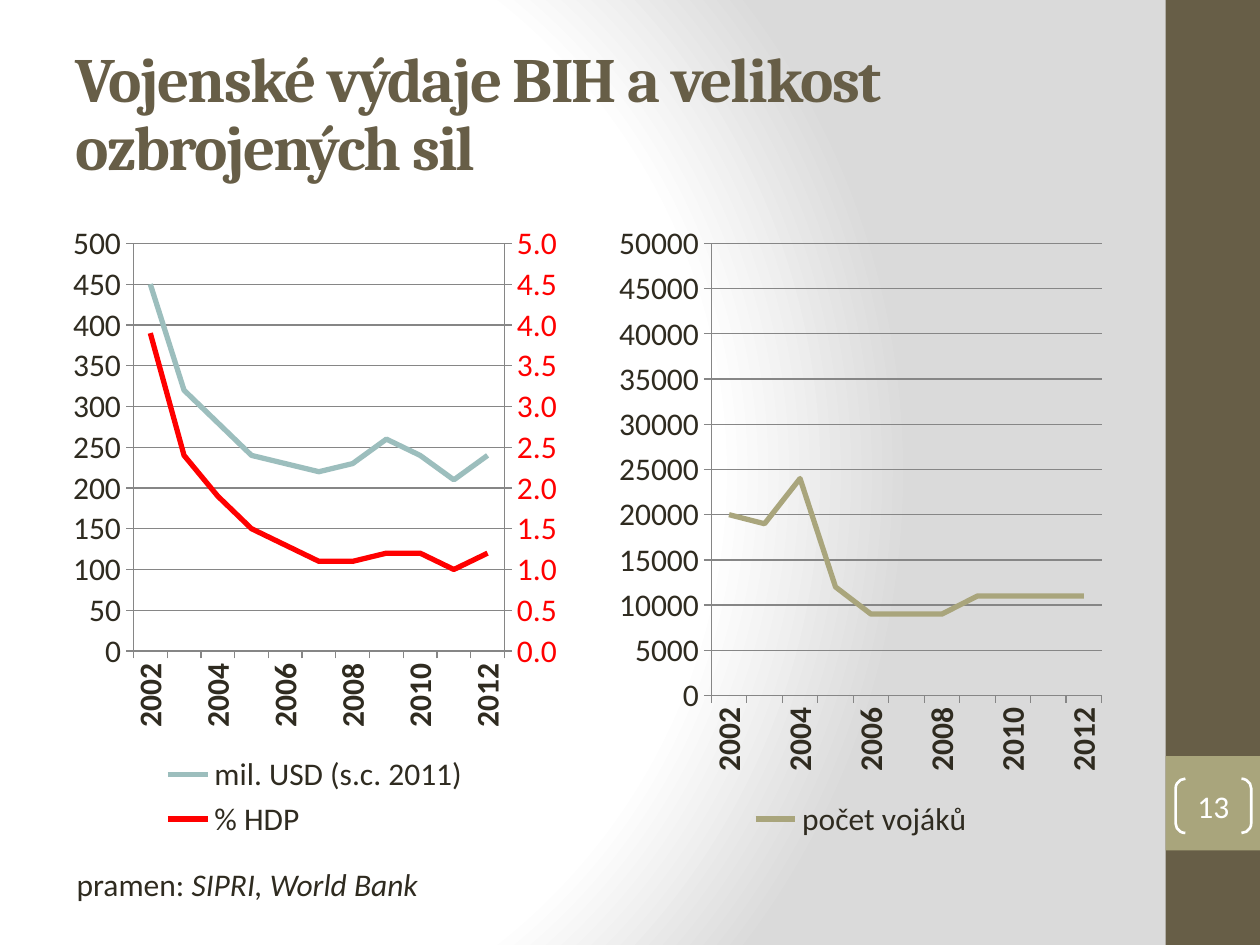
from copy import deepcopy
from dataclasses import dataclass

from pptx import Presentation
from pptx import util as u
from pptx.chart.data import CategoryChartData
from pptx.dml.color import RGBColor
from pptx.enum import chart as charts, shapes, text
from pptx.oxml import parse_xml
from pptx.oxml.ns import nsdecls, qn

COLOURS = {
    "brown": "675E47",
    "olive": "A9A57C",
    "teal": "9CBEBD",
    "red": "FF0000",
    "ink": "2F2B20",
    "white": "FFFFFF",
    "grey": "DADADA",
    "axis": "868686",
}
YEARS = [str(year) for year in range(2002, 2013)]


@dataclass(frozen=True)
class Band:
    top: float
    height: float
    colour: str


@dataclass(frozen=True)
class Line:
    name: str
    values: tuple
    colour: str


@dataclass(frozen=True)
class Plot:
    left: float
    maximum: float
    step: float
    lines: tuple


BANDS = (Band(0, 540, "brown"), Band(432, 54, "olive"))
PLOTS = (
    Plot(36, 500, 50, (
        Line("mil. USD (s.c. 2011)",
             (450, 320, 280, 240, 230, 220, 230, 260, 240, 210, 240), "teal"),
        Line("% HDP",
             (3.9, 2.4, 1.9, 1.5, 1.3, 1.1, 1.1, 1.2, 1.2, 1, 1.2), "red"),
    )),
    Plot(348, 50000, 5000, (
        Line("počet vojáků",
             (20000, 19000, 24000, 12000, 9000, 9000, 9000,
              11000, 11000, 11000, 11000), "olive"),
    )),
)


def rgb(name: str) -> RGBColor:
    return RGBColor.from_string(COLOURS[name])


def add_span(para, content: str, *, size=18, font="Calibri", colour="ink",
             bold=False, italic=False, spacing=0) -> None:
    span = para.add_run()
    span.text = content
    span.font.size = u.Pt(size)
    span.font.name = font
    span.font.bold = bold
    span.font.italic = italic
    span.font.color.rgb = rgb(colour)
    if spacing:
        span.font._element.set("spc", str(spacing * 100))


def add_box(page, left: float, top: float, width: float, height: float):
    return page.shapes.add_textbox(u.Pt(left), u.Pt(top), u.Pt(width), u.Pt(height))


def set_background(page) -> None:
    stops = "".join(
        f'<a:gs pos="{position}000"><a:srgbClr val="{COLOURS[name]}"/></a:gs>'
        for position, name in ((0, "white"), (75, "white"), (100, "grey")))
    page._element.cSld.insert(0, parse_xml(
        f'<p:bg {nsdecls("p", "a")}><p:bgPr><a:gradFill rotWithShape="1">'
        f'<a:gsLst>{stops}</a:gsLst><a:path path="circle">'
        '<a:fillToRect l="20000" t="50000" r="100000" b="50000"/></a:path>'
        '</a:gradFill><a:effectLst/></p:bgPr></p:bg>'))


def add_band(page, band: Band) -> None:
    shape = page.shapes.add_shape(
        shapes.MSO_SHAPE.RECTANGLE, u.Pt(666), u.Pt(band.top), u.Pt(54), u.Pt(band.height))
    shape.shadow.inherit = False
    shape.fill.solid()
    shape.fill.fore_color.rgb = rgb(band.colour)
    shape.line.fill.background()


def add_page_number(page, number: str) -> None:
    bracket = page.shapes.add_shape(
        shapes.MSO_SHAPE.DOUBLE_BRACKET, u.Pt(671.8), u.Pt(445), u.Pt(43.2), u.Pt(31))
    bracket.shadow.inherit = False
    bracket.adjustments[0] = 0.18
    bracket.fill.background()
    bracket.line.color.rgb = rgb("white")
    bracket.line.width = u.Pt(1.5)
    frame = bracket.text_frame
    frame.margin_left = frame.margin_right = frame.margin_top = frame.margin_bottom = 0
    frame.vertical_anchor = text.MSO_ANCHOR.MIDDLE
    para = frame.paragraphs[0]
    para.alignment = text.PP_ALIGN.CENTER
    add_span(para, number, colour="white")


def style_axis(axis) -> None:
    axis.major_tick_mark = charts.XL_TICK_MARK.OUTSIDE
    axis.minor_tick_mark = charts.XL_TICK_MARK.NONE
    axis.format.line.color.rgb = rgb("axis")
    axis.format.line.width = u.Pt(0.75)


def set_value_scale(axis, maximum: float, step: float, number_format: str) -> None:
    axis.minimum_scale = 0
    axis.maximum_scale = maximum
    axis.major_unit = step
    axis.tick_labels.number_format = number_format
    axis.tick_labels.number_format_is_linked = False


def move_last_line_to_right_axis(chart, maximum: float, step: float) -> None:
    area = chart._chartSpace.chart.plotArea
    left_plot = area.find(qn("c:lineChart"))
    category, value = area.find(qn("c:catAx")), area.find(qn("c:valAx"))
    right_plot = deepcopy(left_plot)
    left_plot.remove(left_plot.findall(qn("c:ser"))[-1])
    right_plot.remove(right_plot.find(qn("c:ser")))
    left_plot.addnext(right_plot)
    right_category, right_value = deepcopy(category), deepcopy(value)
    value.addnext(right_value)
    right_value.addnext(right_category)

    category_id, value_id = "50010", "50020"
    for reference, key in zip(right_plot.findall(qn("c:axId")), (category_id, value_id)):
        reference.set("val", key)
    for axis, own, other in ((right_category, category_id, value_id),
                             (right_value, value_id, category_id)):
        axis.find(qn("c:axId")).set("val", own)
        axis.find(qn("c:crossAx")).set("val", other)
    right_category.find(qn("c:delete")).set("val", "1")
    right_value.find(qn("c:axPos")).set("val", "r")
    right_value.find(qn("c:crosses")).set("val", "max")
    right_value.remove(right_value.find(qn("c:majorGridlines")))

    axis = type(chart.value_axis)(right_value)
    set_value_scale(axis, maximum, step, "0.0")
    axis.tick_labels.font.size = u.Pt(18)
    axis.tick_labels.font.color.rgb = rgb("red")


def add_plot(page, plot: Plot) -> None:
    data = CategoryChartData()
    data.categories = YEARS
    for line in plot.lines:
        data.add_series(line.name, line.values)
    chart = page.shapes.add_chart(
        charts.XL_CHART_TYPE.LINE, u.Pt(plot.left), u.Pt(121), u.Pt(288), u.Pt(361.5), data).chart
    chart.has_title = False
    chart.font.size = u.Pt(18)
    chart.font.name = "Calibri"
    chart.font.color.rgb = rgb("ink")
    chart.has_legend = True
    chart.legend.position = charts.XL_LEGEND_POSITION.BOTTOM
    chart.legend.include_in_layout = False
    chart.plots[0].vary_by_categories = False
    for series, line in zip(chart.plots[0].series, plot.lines):
        series.smooth = False
        series.marker.style = charts.XL_MARKER_STYLE.NONE
        series.format.line.color.rgb = rgb(line.colour)
        series.format.line.width = u.Pt(3)

    style_axis(chart.category_axis)
    labels = chart.category_axis.tick_labels
    labels.font.bold = True
    labels.font.size = u.Pt(18)
    chart.category_axis._element.txPr.bodyPr.set("rot", "-5400000")
    style_axis(chart.value_axis)
    set_value_scale(chart.value_axis, plot.maximum, plot.step, "General")
    chart.value_axis.has_major_gridlines = True
    grid = chart.value_axis.major_gridlines.format.line
    grid.color.rgb = rgb("axis")
    grid.width = u.Pt(0.75)
    if len(plot.lines) > 1:
        move_last_line_to_right_axis(chart, 5, 0.5)


def main() -> None:
    deck = Presentation()
    deck.slide_width, deck.slide_height = u.Pt(720), u.Pt(540)
    page = deck.slides.add_slide(deck.slide_layouts[6])
    set_background(page)
    for band in BANDS:
        add_band(page, band)

    title = add_box(page, 36, 21.6, 600, 90).text_frame
    title.word_wrap = True
    title.vertical_anchor = text.MSO_ANCHOR.MIDDLE
    title.paragraphs[0].line_spacing = 0.9
    add_span(title.paragraphs[0], "Vojenské výdaje BIH a velikost ozbrojených sil",
             size=36, font="Cambria", colour="brown", bold=True, spacing=-1)

    for plot in PLOTS:
        add_plot(page, plot)
    add_page_number(page, "13")

    source = add_box(page, 36.7, 491, 212, 29).text_frame
    source.word_wrap = False
    add_span(source.paragraphs[0], "pramen: ")
    add_span(source.paragraphs[0], "SIPRI, World Bank", italic=True)
    deck.save("out.pptx")


if __name__ == "__main__":
    main()
